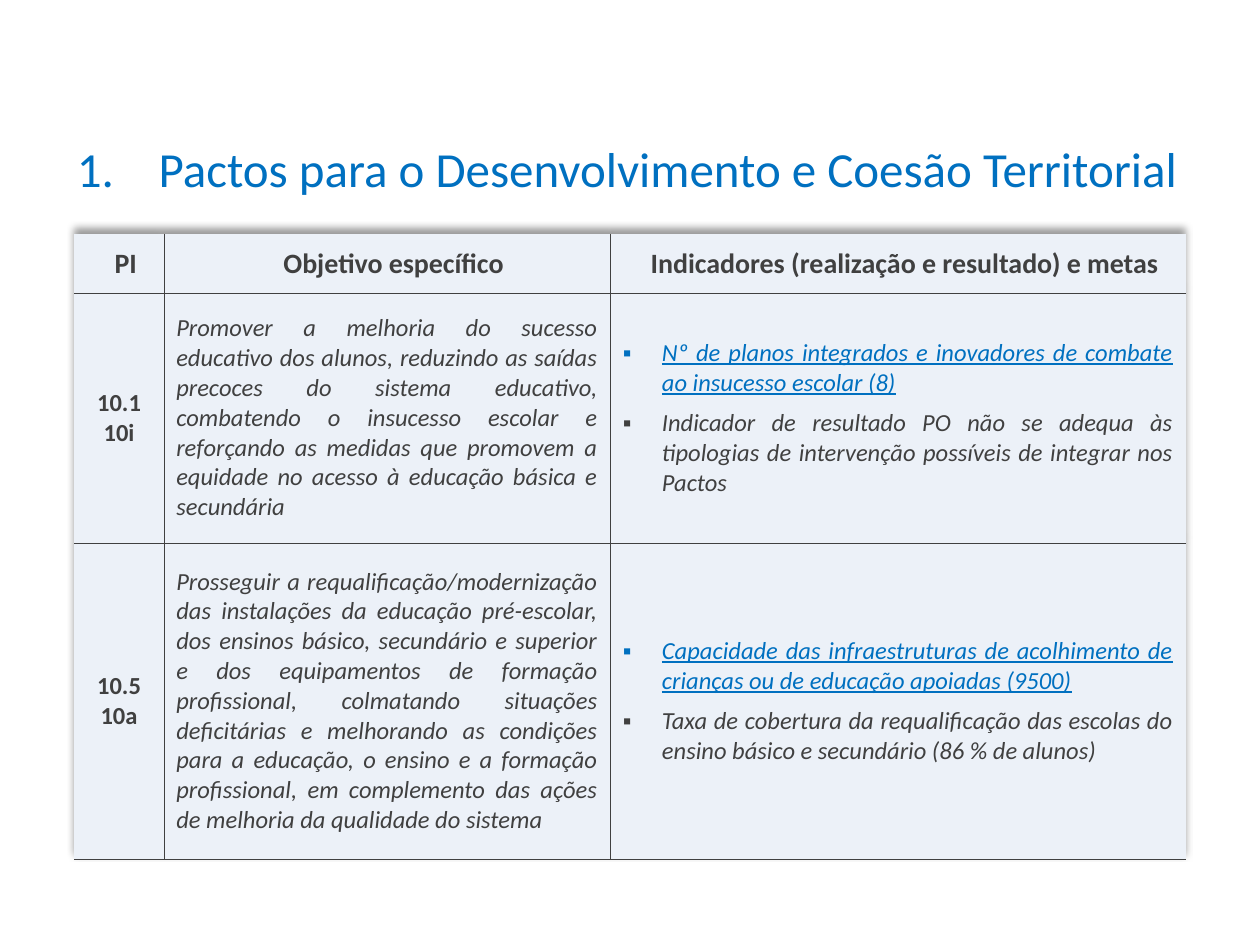
"""Build the slide on the territorial pacts, with its table of goals and indicators."""
from dataclasses import dataclass

from lxml.etree import SubElement
from pptx import Presentation
from pptx.dml.color import RGBColor
from pptx.enum.text import MSO_ANCHOR as Anchor, MSO_AUTO_SIZE as AutoSize, PP_ALIGN as Align
from pptx.oxml import parse_xml
from pptx.oxml.ns import nsdecls, qn
from pptx.util import Cm, Length, Pt

BLUE, GRAY, PALE = "0070C0", "404040", "ECF1F8"
NO_STYLE = "{2D5ABB26-0587-4C30-8999-92F81FD0307C}"
COLUMNS = (1.8, 9, 11.6)
ROWS = (1.19, 5.03, 6.38)
HEADINGS = ("PI", "Objetivo específico", "Indicadores (realização e resultado) e metas")
TITLE_FORMAT = {"size": Pt(28)}
HEADING_FORMAT = {"size": Pt(16), "bold": True}
CODE_FORMAT = {"size": Pt(14), "bold": True}
BODY_FORMAT = {"size": Pt(14), "italic": True}
LINKED_FORMAT = BODY_FORMAT | {"underline": True}
HEADING_MARGINS = {
    "margin_left": Cm(0.3), "margin_top": Cm(0.03),
    "margin_right": Cm(0.03), "margin_bottom": Cm(0),
}


@dataclass(frozen=True)
class Priority:
    codes: tuple[str, str]
    goal: str
    output: str
    result: str


PRIORITIES = (
    Priority(
        ("10.1", "10i"),
        "Promover a melhoria do sucesso educativo dos alunos, reduzindo as saídas precoces "
        "do sistema educativo, combatendo o insucesso escolar e reforçando as medidas que "
        "promovem a equidade no acesso à educação básica e secundária",
        "Nº de planos integrados e inovadores de combate ao insucesso escolar (8)",
        "Indicador de resultado PO não se adequa às tipologias de intervenção possíveis "
        "de integrar nos Pactos",
    ),
    Priority(
        ("10.5", "10a"),
        "Prosseguir a requalificação/modernização das instalações da educação pré-escolar, "
        "dos ensinos básico, secundário e superior e dos equipamentos de formação "
        "profissional, colmatando situações deficitárias e melhorando as condições para a "
        "educação, o ensino e a formação profissional, em complemento das ações de melhoria "
        "da qualidade do sistema",
        "Capacidade das infraestruturas de acolhimento de crianças ou de educação apoiadas (9500)",
        "Taxa de cobertura da requalificação das escolas do ensino básico e secundário "
        "(86 % de alunos)",
    ),
)


def color(code: str) -> RGBColor:
    """Turn a hex string into a colour."""
    return RGBColor.from_string(code)


def write(frame, text: str, formats: dict, align: Align, ink: str = GRAY):
    """Write a paragraph, reusing the empty first one, and return it."""
    first = frame.paragraphs[0]
    paragraph = frame.add_paragraph() if first.runs else first
    paragraph.alignment = align
    run = paragraph.add_run()
    run.text = text
    run.font.name = "Calibri"
    run.font.color.rgb = color(ink)
    for name, value in formats.items():
        setattr(run.font, name, value)
    return paragraph


def add_marker(paragraph, indent: Length, tag: str, **attributes: str) -> None:
    """Give a paragraph a hanging indent and a bullet or number."""
    properties = paragraph._p.get_or_add_pPr()
    properties.set("marL", str(int(indent)))
    properties.set("indent", str(-int(indent)))
    SubElement(properties, qn("a:buFont"), typeface="Calibri" if tag == "a:buAutoNum" else "Arial")
    SubElement(properties, qn(tag), **attributes)


def set_borders(cell, sides: dict[str, bool]) -> None:
    """Draw a thin line on the chosen sides of a cell and none on the others."""
    properties = cell._tc.get_or_add_tcPr()
    for side, drawn in sides.items():
        line = SubElement(properties, qn(f"a:ln{side}"), w=str(int(Pt(0.25))))
        if drawn:
            SubElement(SubElement(line, qn("a:solidFill")), qn("a:srgbClr"), val=GRAY)
        else:
            SubElement(line, qn("a:noFill"))


def style_cells(table) -> None:
    """Fill, centre and rule every cell, leaving the top, left and right edges open."""
    last = len(COLUMNS) - 1
    for row_index, row in enumerate(table.rows):
        for column_index, cell in enumerate(row.cells):
            set_borders(cell, {"L": column_index > 0, "R": column_index < last,
                               "T": row_index > 0, "B": True})
            cell.fill.solid()
            cell.fill.fore_color.rgb = color(PALE)
            cell.vertical_anchor = Anchor.MIDDLE


def add_table_shadow(table) -> None:
    """Cast a soft shadow upwards from the table."""
    table._tbl.tblPr.insert(0, parse_xml(
        f'<a:effectLst {nsdecls("a")}><a:outerShdw blurRad="50800" dist="38100" '
        'dir="16200000" rotWithShape="0"><a:prstClr val="black"><a:alpha val="40000"/>'
        '</a:prstClr></a:outerShdw></a:effectLst>'))


def add_title(slide) -> None:
    """Add the numbered title."""
    box = slide.shapes.add_textbox(Cm(1.3), Cm(2.67), Cm(23), Cm(1.45))
    frame = box.text_frame
    frame.word_wrap = True
    frame.auto_size = AutoSize.SHAPE_TO_FIT_TEXT
    title = write(frame, "Pactos para o Desenvolvimento e Coesão Territorial",
                  TITLE_FORMAT, Align.LEFT, BLUE)
    add_marker(title, Cm(1.65), "a:buAutoNum", type="arabicPeriod")


def fill_row(cells, priority: Priority) -> None:
    """Write the codes, goal and indicators of one priority."""
    codes, goal, indicators = (cell.text_frame for cell in cells)
    for code in priority.codes:
        write(codes, code, CODE_FORMAT, Align.CENTER)
    write(goal, priority.goal, BODY_FORMAT, Align.JUSTIFY)
    output = write(indicators, priority.output, LINKED_FORMAT, Align.JUSTIFY, BLUE)
    result = write(indicators, priority.result, BODY_FORMAT, Align.JUSTIFY)
    result.space_before = Pt(6)
    for indicator in (output, result):
        add_marker(indicator, Cm(0.79), "a:buChar", char="▪")


def add_priorities(slide) -> None:
    """Add the table of priorities."""
    table = slide.shapes.add_table(len(ROWS), len(COLUMNS), Cm(1.5), Cm(4.72),
                                   Cm(sum(COLUMNS)), Cm(sum(ROWS))).table
    table.first_row = table.horz_banding = False
    table._tbl.tblPr.find(qn("a:tableStyleId")).text = NO_STYLE
    for column, width in zip(table.columns, COLUMNS):
        column.width = Cm(width)
    for row, height in zip(table.rows, ROWS):
        row.height = Cm(height)
    style_cells(table)
    add_table_shadow(table)
    for cell, heading in zip(table.rows[0].cells, HEADINGS):
        for name, value in HEADING_MARGINS.items():
            setattr(cell, name, value)
        write(cell.text_frame, heading, HEADING_FORMAT, Align.CENTER)
    for index, priority in enumerate(PRIORITIES, start=1):
        fill_row(table.rows[index].cells, priority)


def main() -> None:
    """Build and save the presentation."""
    presentation = Presentation()
    presentation.slide_width, presentation.slide_height = Cm(25.4), Cm(19.05)
    slide = presentation.slides.add_slide(presentation.slide_layouts[6])
    add_title(slide)
    add_priorities(slide)
    presentation.save("out.pptx")


if __name__ == "__main__":
    main()
